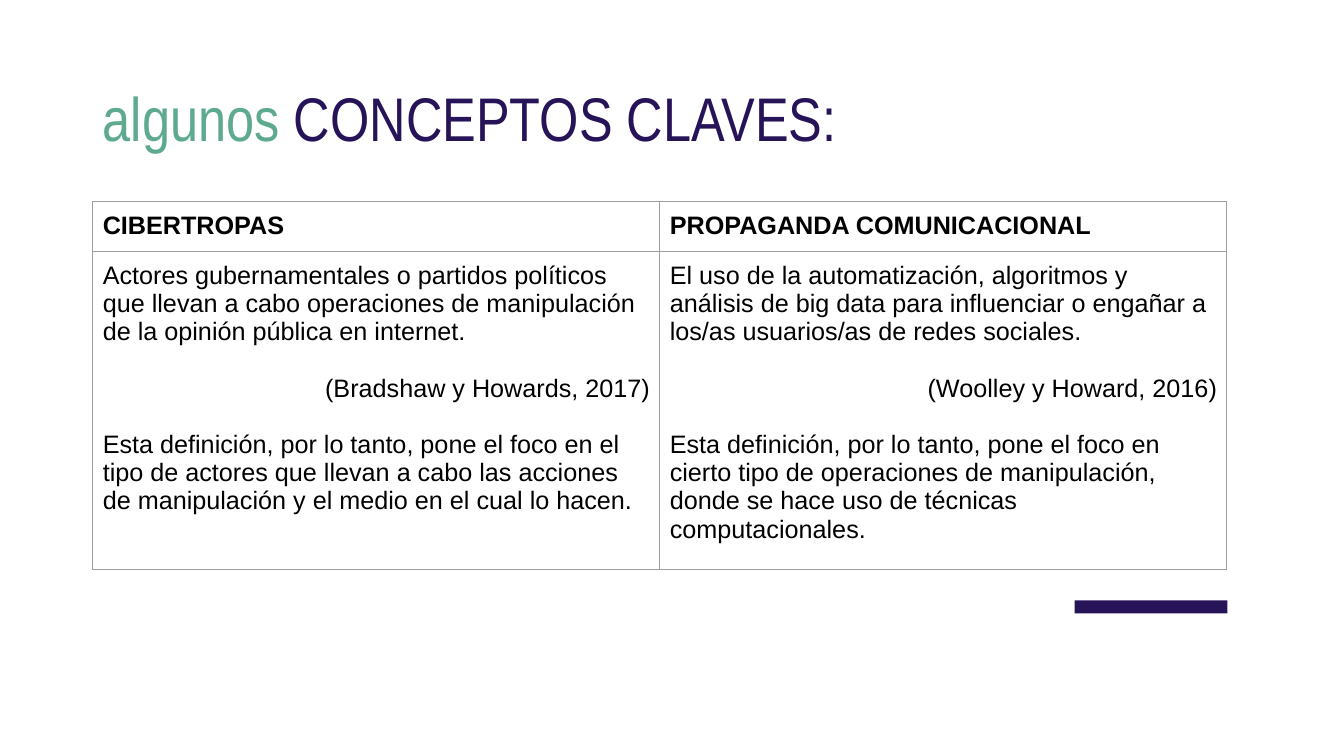
from dataclasses import dataclass
from typing import Any

import lxml.etree
import pptx
import pptx.dml.color
import pptx.enum.shapes
import pptx.enum.text
import pptx.oxml.ns
import pptx.util

Cm = pptx.util.Cm
Pt = pptx.util.Pt
RGB = pptx.dml.color.RGBColor
qn = pptx.oxml.ns.qn
Align = pptx.enum.text.PP_ALIGN


@dataclass(frozen=True)
class Theme:
    green: str = "5EAA8F"
    purple: str = "271357"
    ink: str = "000000"
    border: str = "9E9E9E"
    title_font: str = "Arial Narrow"
    body_font: str = "Arial"
    title_size: int = 44
    body_size: int = 18
    paragraph_gap: int = 20
    border_width: float = 0.75


@dataclass(frozen=True)
class Concept:
    term: str
    definition: str
    citation: str
    focus: str


THEME = Theme()
TITLE_FORMAT = {"name": THEME.title_font, "size": Pt(THEME.title_size)}
BODY_FORMAT = {"name": THEME.body_font, "size": Pt(THEME.body_size), "bold": False}
TERM_FORMAT = {**BODY_FORMAT, "bold": True}

CONCEPTS = [
    Concept(
        "CIBERTROPAS",
        "Actores gubernamentales o partidos políticos que llevan a cabo operaciones "
        "de manipulación de la opinión pública en internet.",
        "(Bradshaw y Howards, 2017)",
        "Esta definición, por lo tanto, pone el foco en el tipo de actores que llevan "
        "a cabo las acciones de manipulación y el medio en el cual lo hacen.",
    ),
    Concept(
        "PROPAGANDA COMUNICACIONAL",
        "El uso de la automatización, algoritmos y análisis de big data para "
        "influenciar o engañar a los/as usuarios/as de redes sociales.",
        "(Woolley y Howard, 2016)",
        "Esta definición, por lo tanto, pone el foco en cierto tipo de operaciones de "
        "manipulación, donde se hace uso de técnicas computacionales.",
    ),
]


def add_run(paragraph: Any, text: str, color: str, font_format: dict[str, Any]) -> None:
    run = paragraph.add_run()
    run.text = text
    for attribute, value in font_format.items():
        setattr(run.font, attribute, value)
    run.font.color.rgb = RGB.from_string(color)


def add_title(slide: Any) -> None:
    title = slide.shapes.add_textbox(Cm(2.34), Cm(1.22), Cm(29.21), Cm(3.68))
    frame = title.text_frame
    frame.word_wrap = True
    frame.vertical_anchor = pptx.enum.text.MSO_ANCHOR.MIDDLE
    heading = frame.paragraphs[0]
    heading.line_spacing = 0.9
    add_run(heading, "algunos ", THEME.green, TITLE_FORMAT)
    add_run(heading, "CONCEPTOS CLAVES:", THEME.purple, TITLE_FORMAT)


def add_accent(slide: Any) -> None:
    accent = slide.shapes.add_shape(
        pptx.enum.shapes.MSO_SHAPE.RECTANGLE, Cm(27.08), Cm(15.13), Cm(3.85), Cm(0.33)
    )
    accent.shadow.inherit = False
    accent.fill.solid()
    accent.fill.fore_color.rgb = RGB.from_string(THEME.purple)
    accent.line.fill.background()


def style_cell(cell: Any) -> None:
    for side in ("left", "top", "right", "bottom"):
        setattr(cell, f"margin_{side}", Cm(0.25))
    # Borders precede the fill in the cell properties
    properties = cell._tc.get_or_add_tcPr()
    for edge in ("a:lnL", "a:lnR", "a:lnT", "a:lnB"):
        border = lxml.etree.SubElement(
            properties, qn(edge), w=str(Pt(THEME.border_width))
        )
        solid = lxml.etree.SubElement(border, qn("a:solidFill"))
        lxml.etree.SubElement(solid, qn("a:srgbClr"), val=THEME.border)
    cell.fill.background()


def fill_concept(term_cell: Any, body_cell: Any, concept: Concept) -> None:
    add_run(term_cell.text_frame.paragraphs[0], concept.term, THEME.ink, TERM_FORMAT)
    frame = body_cell.text_frame
    definition = frame.paragraphs[0]
    citation = frame.add_paragraph()
    focus = frame.add_paragraph()
    citation.alignment = Align.RIGHT
    for paragraph in (citation, focus):
        paragraph.space_before = Pt(THEME.paragraph_gap)
    add_run(definition, concept.definition, THEME.ink, BODY_FORMAT)
    add_run(citation, concept.citation, THEME.ink, BODY_FORMAT)
    add_run(focus, concept.focus, THEME.ink, BODY_FORMAT)


def add_concepts(slide: Any) -> None:
    column_width = Cm(14.29)
    row_heights = (Cm(1.22), Cm(7.62))
    concepts = slide.shapes.add_table(
        len(row_heights), len(CONCEPTS), Cm(2.34), Cm(5.08),
        column_width * len(CONCEPTS), sum(row_heights),
    ).table
    concepts.horz_banding = False
    for row, height in zip(concepts.rows, row_heights):
        row.height = height
    for cell in concepts.iter_cells():
        style_cell(cell)
    for index, concept in enumerate(CONCEPTS):
        concepts.columns[index].width = column_width
        fill_concept(concepts.cell(0, index), concepts.cell(1, index), concept)


def main() -> None:
    deck = pptx.Presentation()
    deck.slide_width, deck.slide_height = Cm(33.87), Cm(19.05)
    slide = deck.slides.add_slide(deck.slide_layouts[6])
    # Heading, accent bar and comparison table
    add_title(slide)
    add_accent(slide)
    add_concepts(slide)
    deck.save("out.pptx")


if __name__ == "__main__":
    main()
